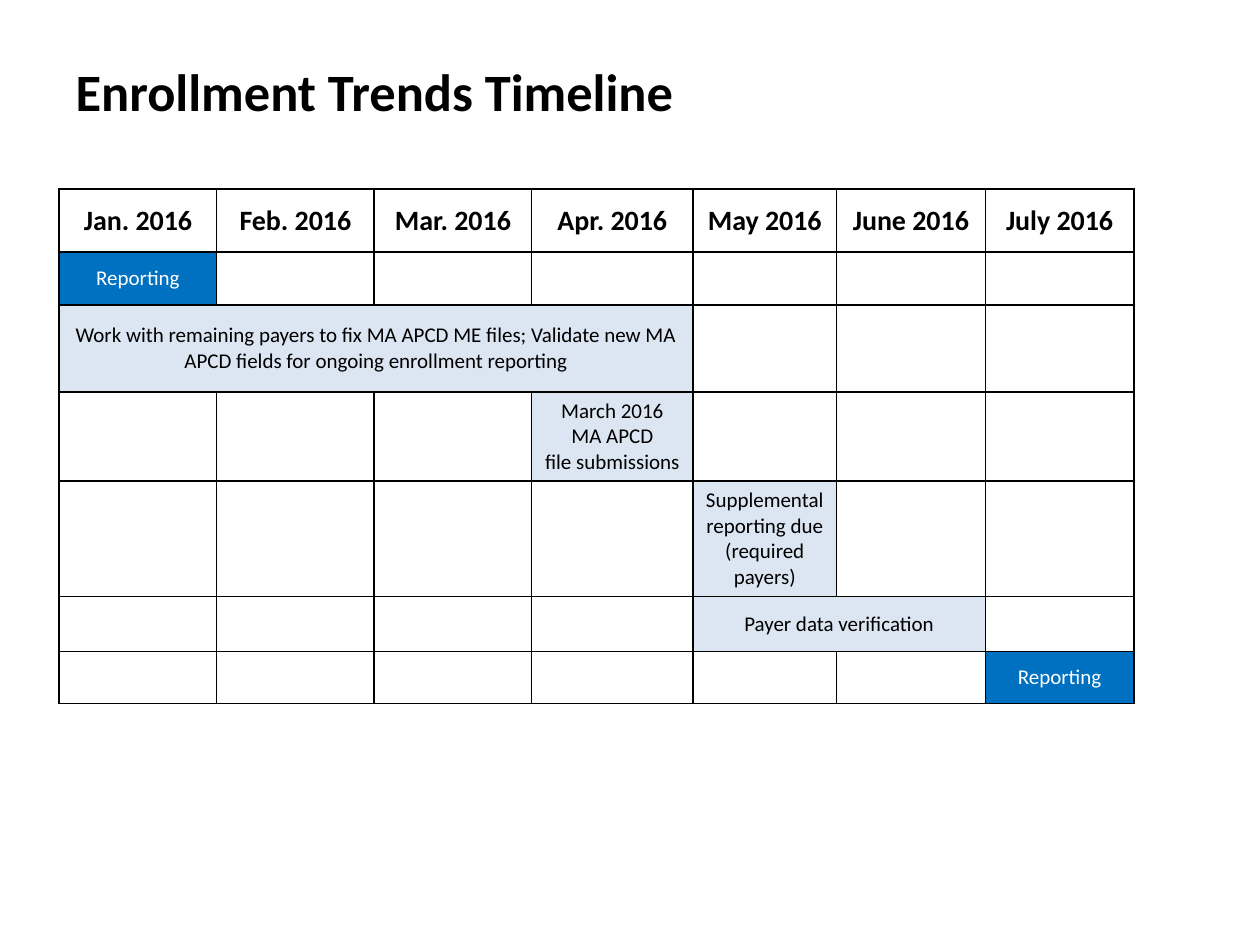
"""Build the enrollment trends timeline slide."""
from dataclasses import dataclass

from lxml.etree import SubElement
from pptx import Presentation
from pptx.dml.color import RGBColor
from pptx.enum.text import MSO_ANCHOR, PP_ALIGN
from pptx.oxml.ns import qn
from pptx.util import Inches, Pt

COLORS = {"ink": "000000", "paper": "FFFFFF", "report": "0070C0", "task": "DCE6F2"}
FONT = "Calibri"
MONTHS = ["Jan.", "Feb.", "Mar.", "Apr.", "May", "June", "July"]
COLUMN_WIDTHS = [1.25, 1.25, 1.25, 1.28, 1.14, 1.18, 1.18]
ROW_HEIGHTS = [0.5, 0.42, 0.69, 0.7, 0.9, 0.44, 0.41]


@dataclass
class Entry:
    """A filled stretch of the timeline, placed by table row and column."""
    row: int
    column: int
    lines: list[str]
    fill: str = "task"
    ink: str = "ink"
    months: int = 1
    size: int = 12
    bold: bool = False


HEADINGS = [Entry(0, column, [f"{month} 2016"], "paper", size=16, bold=True)
            for column, month in enumerate(MONTHS)]
TASKS = [
    Entry(1, 0, ["Reporting"], "report", "paper"),
    Entry(2, 0, ["Work with remaining payers to fix MA APCD ME files; Validate new "
                 "MA APCD fields for ongoing enrollment reporting"], months=4),
    Entry(3, 3, ["March 2016", "MA APCD", "file submissions"]),
    Entry(4, 4, ["Supplemental reporting due (required payers)"]),
    Entry(5, 4, ["Payer data verification"], months=2),
    Entry(6, 6, ["Reporting"], "report", "paper"),
]


def add_span(para, text: str, size: int, color: str, bold: bool) -> None:
    """Add one formatted run to a paragraph."""
    span = para.add_run()
    span.text = text
    span.font.name = FONT
    span.font.size = Pt(size)
    span.font.bold = bold
    span.font.color.rgb = RGBColor.from_string(COLORS[color])


def fill_cell(cell, color: str) -> None:
    """Give a cell a solid fill."""
    cell.fill.solid()
    cell.fill.fore_color.rgb = RGBColor.from_string(COLORS[color])


def draw_borders(cell) -> None:
    """Rule all four sides of a cell."""
    properties = cell._tc.get_or_add_tcPr()
    for position, side in enumerate(["lnL", "lnR", "lnT", "lnB"]):
        line = SubElement(properties, qn(f"a:{side}"), w=str(Pt(1)))
        SubElement(SubElement(line, qn("a:solidFill")), qn("a:srgbClr"), val=COLORS["ink"])
        properties.insert(position, line)


def draw_entry(table, entry: Entry) -> None:
    """Write an entry into its cell, merged across its months."""
    cell = table.cell(entry.row, entry.column)
    if entry.months > 1:
        cell.merge(table.cell(entry.row, entry.column + entry.months - 1))
    fill_cell(cell, entry.fill)
    cell.vertical_anchor = MSO_ANCHOR.MIDDLE
    for number, line in enumerate(entry.lines):
        frame = cell.text_frame
        para = frame.add_paragraph() if number else frame.paragraphs[0]
        para.alignment = PP_ALIGN.CENTER
        add_span(para, line, entry.size, entry.ink, entry.bold)


def draw_title(page) -> None:
    """Place and write the title."""
    title = page.shapes.title
    title.left, title.top = Inches(0.5), Inches(0.42)
    title.width, title.height = Inches(8.5), Inches(0.61)
    title.text_frame.vertical_anchor = MSO_ANCHOR.TOP
    para = title.text_frame.paragraphs[0]
    para.alignment = PP_ALIGN.LEFT
    add_span(para, "Enrollment Trends Timeline", 30, "ink", True)


def draw_timeline(page) -> None:
    """Draw the month grid and its entries."""
    table = page.shapes.add_table(
        len(ROW_HEIGHTS), len(COLUMN_WIDTHS), Inches(0.47), Inches(1.5),
        Inches(sum(COLUMN_WIDTHS)), Inches(sum(ROW_HEIGHTS))).table
    table.first_row = table.horz_banding = False
    for column, width in zip(table.columns, COLUMN_WIDTHS):
        column.width = Inches(width)
    for row, height in zip(table.rows, ROW_HEIGHTS):
        row.height = Inches(height)
    for cell in table.iter_cells():
        fill_cell(cell, "paper")
        draw_borders(cell)
    for entry in HEADINGS + TASKS:
        draw_entry(table, entry)


def main() -> None:
    """Build and save the deck."""
    deck = Presentation()
    deck.slide_width, deck.slide_height = Inches(10), Inches(7.5)
    page = deck.slides.add_slide(deck.slide_layouts.get_by_name("Title Only"))
    draw_title(page)
    draw_timeline(page)
    deck.save("out.pptx")


if __name__ == "__main__":
    main()
